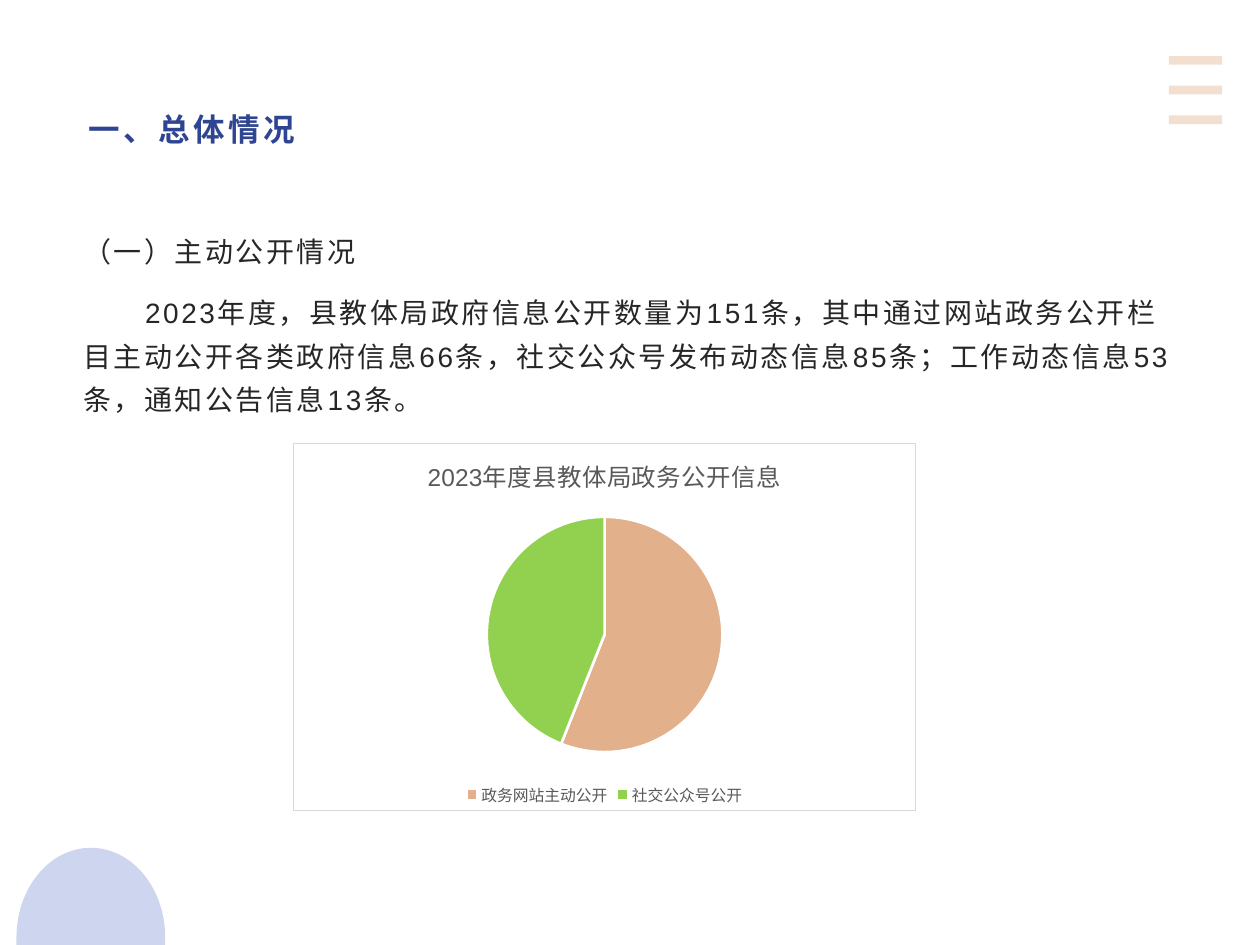
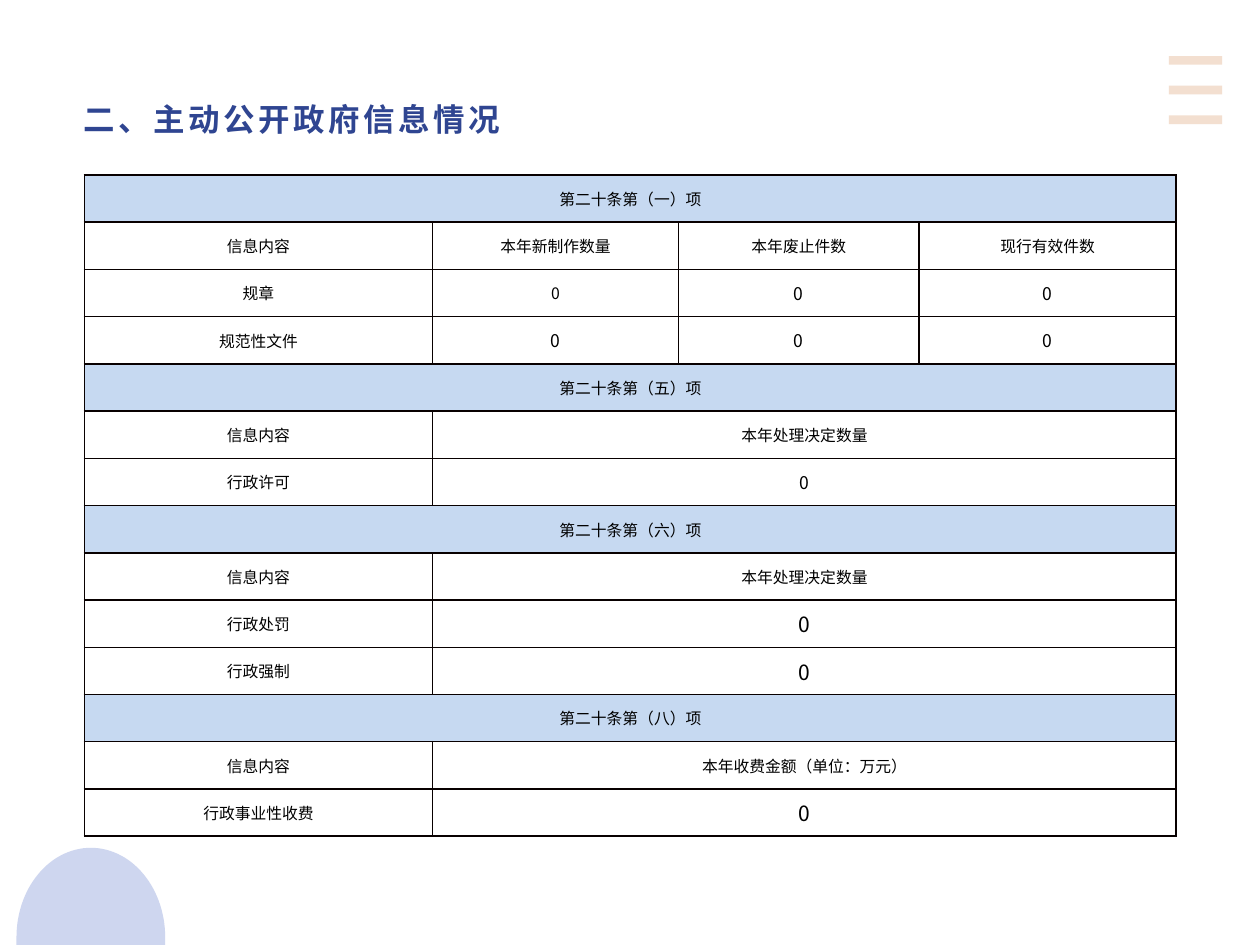
from dataclasses import dataclass
from math import cos, pi, sin

from lxml import etree
from pptx import Presentation
from pptx.chart.data import CategoryChartData
from pptx.dml.color import RGBColor
from pptx.enum.chart import XL_CHART_TYPE as ChartType, XL_LEGEND_POSITION as LegendPos
from pptx.enum.shapes import MSO_CONNECTOR as Connector
from pptx.enum.text import MSO_ANCHOR as Anchor, MSO_AUTO_SIZE as AutoSize, PP_ALIGN as Align
from pptx.oxml import parse_xml
from pptx.oxml.ns import nsdecls, qn
from pptx.util import Pt

# Shared look
NAVY, PEACH, GREEN, LILAC = "2F4591", "E2B08A", "92D050", "9FAEE0"
INK, GREY, FRAME, WHITE = "262626", "595959", "D9D9D9", "FFFFFF"
BAND, GRID, BLACK = "C6D9F1", "080000", "000000"
LATIN, CJK = "Arial", "Noto Sans CJK SC"
TITLE_SIZE = (640.8, 26)


@dataclass
class Box:
    left: float
    top: float
    width: float
    height: float

    def emu(self) -> tuple:
        return Pt(self.left), Pt(self.top), Pt(self.width), Pt(self.height)


@dataclass
class Row:
    cells: tuple
    sizes: tuple = (9, 9, 9, 9)

    @property
    def is_band(self) -> bool:
        return len(self.cells) == 1


def rgb(color: str) -> RGBColor:
    return RGBColor.from_string(color)


def write(paragraph, text: str, *, size: float, color: str, font: str = LATIN,
          bold: bool = False, tracking: float = 0, align=Align.LEFT,
          line_spacing=None, after: float = 0, first_indent: float = 0) -> None:
    paragraph.alignment = align
    paragraph.space_before, paragraph.space_after = Pt(0), Pt(after)
    if line_spacing:
        paragraph.line_spacing = line_spacing
    run = paragraph.add_run()
    run.text = text
    run.font.size, run.font.bold, run.font.name = Pt(size), bold, font
    run.font.color.rgb = rgb(color)
    props = run.font._element
    if tracking:
        props.set("spc", str(int(tracking * 100)))
    etree.SubElement(props, qn("a:ea")).set("typeface", font)
    # No bullet, own first-line indent
    para_props = paragraph._p.get_or_add_pPr()
    para_props.set("marL", "0")
    para_props.set("indent", str(Pt(first_indent)))
    etree.SubElement(para_props, qn("a:buNone"))


def place(holder, box: Box, insets: tuple, anchor):
    holder.left, holder.top, holder.width, holder.height = box.emu()
    frame = holder.text_frame
    frame.word_wrap, frame.auto_size, frame.vertical_anchor = True, AutoSize.NONE, anchor
    frame.margin_left, frame.margin_top, frame.margin_right, frame.margin_bottom = map(Pt, insets)
    return frame


def add_decor(slide) -> None:
    # Three bars, top right
    for i in range(3):
        y = Pt(34.5 + 17 * i)
        bar = slide.shapes.add_connector(Connector.STRAIGHT, Pt(668), y, Pt(698.4), y)
        bar.line.width = Pt(5)
        bar.line.color.rgb = rgb(PEACH)
        set_alpha(bar.line._ln, 40)
        etree.SubElement(bar._element.spPr, qn("a:effectLst"))
    # Dome, bottom left
    center_x, base_y, radius_x, radius_y, steps = 51.9, 535.7, 42.5, 51.2, 60
    arc = [(Pt(center_x - radius_x * cos(pi * i / steps)),
            Pt(base_y - radius_y * sin(pi * i / steps))) for i in range(steps + 1)]
    bottom = [(arc[-1][0], Pt(540)), (arc[0][0], Pt(540))]
    builder = slide.shapes.build_freeform(*arc[0])
    builder.add_line_segments(arc[1:] + bottom, close=True)
    dome = builder.convert_to_shape()
    dome.shadow.inherit = False
    dome.fill.solid()
    dome.fill.fore_color.rgb = rgb(LILAC)
    dome.line.fill.background()
    set_alpha(dome._element.spPr, 50)


def set_alpha(element, percent: int) -> None:
    color = element.find(qn("a:solidFill")).find(qn("a:srgbClr"))
    etree.SubElement(color, qn("a:alpha")).set("val", str(percent * 1000))


def start_slide(deck, layout: int, title: str, left: float, top: float):
    slide = deck.slides.add_slide(deck.slide_layouts[layout])
    add_decor(slide)
    frame = place(slide.shapes.title, Box(left, top, *TITLE_SIZE), (8, 3, 6, 3), Anchor.MIDDLE)
    write(frame.paragraphs[0], title, size=18, color=NAVY, bold=True, tracking=2)
    return slide


def add_disclosure_pie(slide, box: Box) -> None:
    shares = CategoryChartData()
    shares.categories = ["政务网站主动公开", "社交公众号公开"]
    shares.add_series("Series 1", (56, 44))
    chart = slide.shapes.add_chart(ChartType.PIE, *box.emu(), shares).chart
    chart.font.size, chart.font.name = Pt(10), LATIN
    chart.font.color.rgb = rgb(BLACK)

    chart.has_title = True
    write(chart.chart_title.text_frame.paragraphs[0], "2023年度县教体局政务公开信息",
          size=14, color=GREY, align=Align.CENTER)
    chart.chart_title.include_in_layout = False

    chart.has_legend = True
    legend = chart.legend
    legend.position, legend.include_in_layout = LegendPos.BOTTOM, False
    legend.font.size, legend.font.name = Pt(9), LATIN
    legend.font.color.rgb = rgb(GREY)

    pie = chart.plots[0]
    pie.vary_by_categories = True
    for i, color in enumerate((PEACH, GREEN)):
        slice_format = pie.series[0].points[i].format
        slice_format.fill.solid()
        slice_format.fill.fore_color.rgb = rgb(color)
        slice_format.line.color.rgb = rgb(WHITE)
        slice_format.line.width = Pt(1.5)

    # Frame around the whole chart
    chart._chartSpace.find(qn("c:chart")).addnext(parse_xml(
        f'<c:spPr {nsdecls("c", "a")}>'
        f'<a:solidFill><a:srgbClr val="{WHITE}"/></a:solidFill>'
        f'<a:ln w="{Pt(0.75)}"><a:solidFill><a:srgbClr val="{FRAME}"/></a:solidFill></a:ln>'
        '</c:spPr>'))


def add_borders(cell) -> None:
    props = cell._tc.get_or_add_tcPr()
    for side in ("lnL", "lnR", "lnT", "lnB"):
        props.append(parse_xml(
            f'<a:{side} {nsdecls("a")} w="{Pt(1)}">'
            f'<a:solidFill><a:srgbClr val="{GRID}"/></a:solidFill></a:{side}>'))


def add_report_table(slide, left: float, top: float, widths: tuple,
                     row_height: float, rows: list) -> None:
    box = Box(left, top, sum(widths), row_height * len(rows))
    table = slide.shapes.add_table(len(rows), len(widths), *box.emu()).table
    table.first_row = table.horz_banding = False
    for column, width in zip(table.columns, widths):
        column.width = Pt(width)
    last = len(widths) - 1
    for r, row in enumerate(rows):
        table.rows[r].height = Pt(row_height)
        for c in range(len(widths)):
            cell = table.cell(r, c)
            add_borders(cell)
            if row.is_band:
                cell.fill.solid()
                cell.fill.fore_color.rgb = rgb(BAND)
            else:
                cell.fill.background()
        # The last text of a short row spans the remaining columns
        end = len(row.cells) - 1
        if end < last:
            table.cell(r, end).merge(table.cell(r, last))
        for c, text in enumerate(row.cells):
            cell = table.cell(r, c)
            cell.vertical_anchor = Anchor.MIDDLE
            cell.margin_left = cell.margin_right = Pt(5)
            cell.margin_top = cell.margin_bottom = Pt(0)
            write(cell.text_frame.paragraphs[0], text, size=row.sizes[c], color=BLACK,
                  font=CJK, align=Align.CENTER)


def build_overview(deck) -> None:
    slide = start_slide(deck, 1, "一、总体情况", 42.5, 60.5)
    frame = place(slide.placeholders[1], Box(39.6, 128.2, 640.8, 318.2), (8, 0, 6.5, 0), Anchor.TOP)
    body_style = dict(size=16, color=INK, tracking=1.5, line_spacing=1.3, after=10)
    write(frame.paragraphs[0], "（一）主动公开情况", **body_style)
    write(frame.add_paragraph(),
          "2023年度，县教体局政府信息公开数量为151条，其中通过网站政务公开栏目主动公开各类政府信息66条，"
          "社交公众号发布动态信息85条；工作动态信息53条，通知公告信息13条。",
          first_indent=35.3, **body_style)
    add_disclosure_pie(slide, Box(167.3, 253, 356.4, 210.7))


def build_report(deck) -> None:
    slide = start_slide(deck, 5, "二、主动公开政府信息情况", 39.6, 54.7)
    item, decisions = "信息内容", "本年处理决定数量"
    rows = [
        Row(("第二十条第（一）项",)),
        Row((item, "本年新制作数量", "本年废止件数", "现行有效件数")),
        Row(("规章", "0", "0", "0"), (9, 9, 10, 10)),
        Row(("规范性文件", "0", "0", "0"), (9, 10, 10, 10)),
        Row(("第二十条第（五）项",)),
        Row((item, decisions)),
        Row(("行政许可", "0"), (9, 10)),
        Row(("第二十条第（六）项",)),
        Row((item, decisions)),
        Row(("行政处罚", "0"), (9, 12)),
        Row(("行政强制", "0"), (9, 12)),
        Row(("第二十条第（八）项",)),
        Row((item, "本年收费金额（单位：万元）")),
        Row(("行政事业性收费", "0"), (9, 12)),
    ]
    add_report_table(slide, 48.2, 100, (199, 140.5, 137.5, 147), 27, rows)


def main() -> None:
    deck = Presentation()
    deck.slide_width, deck.slide_height = Pt(720), Pt(540)
    build_overview(deck)
    build_report(deck)
    deck.save("out.pptx")


if __name__ == "__main__":
    main()
